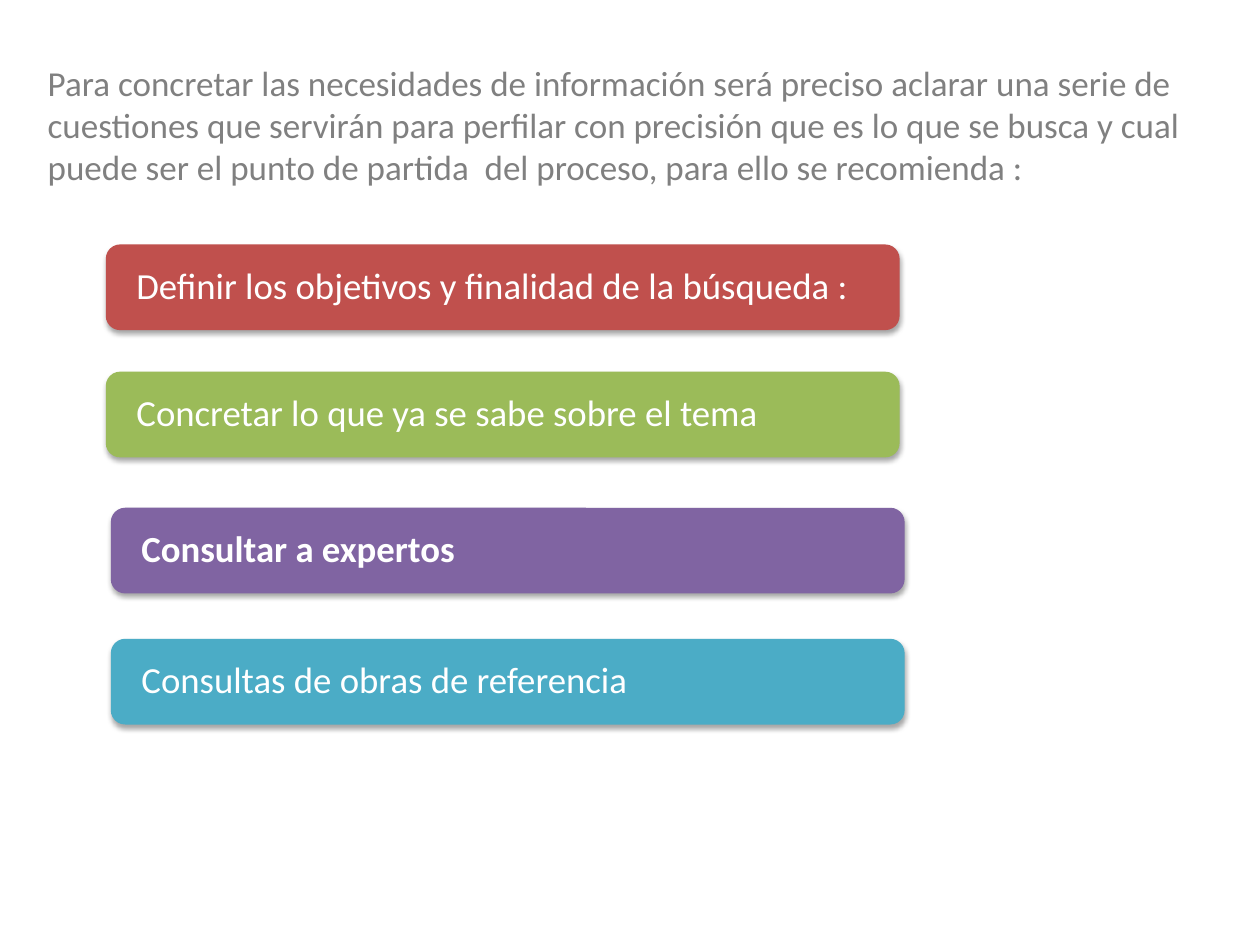
from lxml import etree
from pptx import Presentation
from pptx.dml.color import RGBColor
from pptx.enum.shapes import MSO_SHAPE
from pptx.enum.text import MSO_ANCHOR, PP_ALIGN
from pptx.oxml.ns import qn
from pptx.util import Inches, Pt

ROUNDED = MSO_SHAPE.ROUNDED_RECTANGLE
MIDDLE, TOP = MSO_ANCHOR.MIDDLE, MSO_ANCHOR.TOP
LEFT = PP_ALIGN.LEFT

THEME = {
    "font": "Calibri",
    "intro_size": 20,
    "step_size": 21,
    "intro": "808080",
    "step_text": "FFFFFF",
    "shadow": "000000",
}

INTRO = (
    "Para concretar las necesidades de información será preciso aclarar una serie de "
    "cuestiones que servirán para perfilar con precisión que es lo que se busca y cual "
    "puede ser el punto de partida  del proceso, para ello se recomienda :"
)

# text, fill, left, top, bold
STEPS = [
    ("Definir los objetivos y finalidad de la búsqueda :", "C0504D", 0.84, 1.94, False),
    ("Concretar lo que ya se sabe sobre el tema", "9BBB59", 0.84, 2.95, False),
    ("Consultar a expertos", "8064A2", 0.88, 4.03, True),
    ("Consultas de obras de referencia", "4BACC6", 0.88, 5.07, False),
]
STEP_WIDTH, STEP_HEIGHT = 6.3, 0.68
STEP_INSET = 0.21  # the rounded corners add the remaining 0.03


def write_text(shape, text, *, size, color, bold=False, anchor=TOP,
               side=0.1, vertical=0.05, line_spacing=1.0):
    frame = shape.text_frame
    frame.word_wrap = True
    frame.vertical_anchor = anchor
    frame.margin_left = frame.margin_right = Inches(side)
    frame.margin_top = frame.margin_bottom = Inches(vertical)
    paragraph = frame.paragraphs[0]
    paragraph.alignment = LEFT
    paragraph.line_spacing = line_spacing
    run = paragraph.add_run()
    run.text = text
    run.font.name = THEME["font"]
    run.font.size = Pt(size)
    run.font.bold = bold
    run.font.color.rgb = RGBColor.from_string(color)


def add_soft_shadow(shape):
    """Give the shape a faint shadow that falls straight down."""
    shape.shadow.inherit = False
    effects = shape.element.spPr.find(qn("a:effectLst"))
    shadow = etree.SubElement(
        effects, qn("a:outerShdw"), blurRad=str(Pt(3.1)), dist=str(Pt(1.8)),
        dir=str(90 * 60000), rotWithShape="0")
    color = etree.SubElement(shadow, qn("a:srgbClr"), val=THEME["shadow"])
    etree.SubElement(color, qn("a:alpha"), val="35000")


def add_step(slide, text, fill, left, top, bold):
    step = slide.shapes.add_shape(
        ROUNDED, Inches(left), Inches(top), Inches(STEP_WIDTH), Inches(STEP_HEIGHT))
    step.fill.solid()
    step.fill.fore_color.rgb = RGBColor.from_string(fill)
    step.line.fill.background()
    add_soft_shadow(step)
    write_text(step, text, size=THEME["step_size"], color=THEME["step_text"], bold=bold,
               anchor=MIDDLE, side=STEP_INSET, vertical=0, line_spacing=0.9)


def main():
    presentation = Presentation()
    presentation.slide_width, presentation.slide_height = Inches(10), Inches(7.5)
    slide = presentation.slides.add_slide(presentation.slide_layouts.get_by_name("Blank"))
    for step in STEPS:
        add_step(slide, *step)
    intro = slide.shapes.add_textbox(Inches(0.28), Inches(0.44), Inches(9.45), Inches(1.11))
    write_text(intro, INTRO, size=THEME["intro_size"], color=THEME["intro"])
    presentation.save("out.pptx")


if __name__ == "__main__":
    main()
